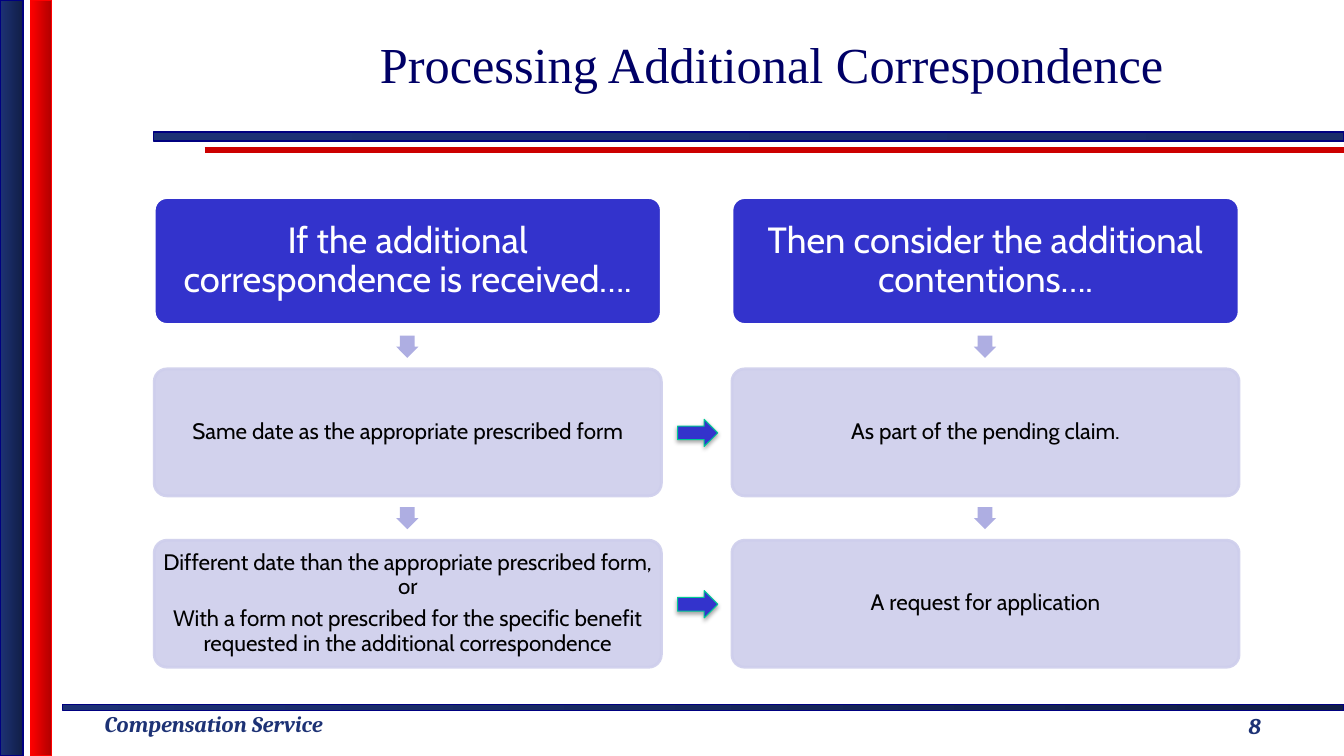
from lxml.etree import SubElement
from pptx import Presentation
from pptx.dml.color import RGBColor
from pptx.enum.shapes import MSO_CONNECTOR, MSO_SHAPE
from pptx.enum.text import MSO_ANCHOR, PP_ALIGN
from pptx.oxml.ns import qn
from pptx.util import Pt

PX = 9144  # 100 px to the inch
HUES = {
    "navy": "1D3275", "dusk": "111E46", "ink": "1A2D69", "edge": "000080",
    "red": "FF0000", "wine": "B20000", "rule": "CC0000", "title": "000066",
    "blue": "3333CC", "pale": "CECEEC", "mauve": "AEAEE2", "teal": "00C896",
    "white": "FFFFFF", "black": "000000",
}
COLS = [
    ["If the additional correspondence is received….",
     "Same date as the appropriate prescribed form",
     "Different date than the appropriate prescribed form, or\n"
     "With a form not prescribed for the specific benefit "
     "requested in the additional correspondence"],
    ["Then consider the additional contentions….",
     "As part of the pending claim.",
     "A request for application"],
]
LEFTS = [153, 726]
TOPS = [196, 366, 536]
WIDE, HIGH = 503, 126


def hue(name):
    return RGBColor.from_string(HUES[name])


def add(kind, box, fill, line=None, width=1):
    """Add a flat preset shape; a pair of fill names makes a gradient."""
    shape = slide.shapes.add_shape(kind, *[n * PX for n in box])
    shape.shadow.inherit = False
    if isinstance(fill, tuple):
        shape.fill.gradient()
        shape.fill.gradient_angle = 0
        for stop, name in zip(shape.fill.gradient_stops, fill):
            stop.color.rgb = hue(name)
    else:
        shape.fill.solid()
        shape.fill.fore_color.rgb = hue(fill)
    if line:
        shape.line.color.rgb = hue(line)
        shape.line.width = Pt(width)
    else:
        shape.line.fill.background()
    return shape


deck = Presentation()
deck.slide_width, deck.slide_height = 1333 * PX, 750 * PX
slide = deck.slides.add_slide(deck.slide_layouts[5])

# Frame of rules and bars
rule = slide.shapes.add_connector(
    MSO_CONNECTOR.STRAIGHT, 203 * PX, 149 * PX, 1333 * PX, 149 * PX)
rule.line.color.rgb = hue("rule")
rule.line.width = Pt(4)
SubElement(rule._element.spPr, qn("a:effectLst"))

for box, fill, line in [
    ((62, 699, 1271, 6), ("navy", "dusk"), "edge"),
    ((152, 131, 1181, 9), ("navy", "ink"), "edge"),
    ((0, 0, 23, 750), ("navy", "dusk"), "edge"),
    ((30, 0, 21, 750), ("red", "wine"), "red"),
]:
    add(MSO_SHAPE.RECTANGLE, box, fill, line)

# Title and footer
title = slide.shapes.title
title.left, title.top, title.width, title.height = [
    n * PX for n in (234, 0, 1063, 126)]
title.text_frame.text = "Processing Additional Correspondence"
title.text_frame.vertical_anchor = MSO_ANCHOR.MIDDLE
head = title.text_frame.paragraphs[0]
head.alignment = PP_ALIGN.CENTER
head.font.name, head.font.size = "Times New Roman", Pt(36)
head.font.color.rgb = hue("title")

for text, box, align, anchor in [
    ("Compensation Service", (94, 700, 282, 37), PP_ALIGN.LEFT, MSO_ANCHOR.TOP),
    ("8", (1156, 695, 177, 50), PP_ALIGN.CENTER, MSO_ANCHOR.MIDDLE),
]:
    frame = slide.shapes.add_textbox(*[n * PX for n in box]).text_frame
    frame.word_wrap = True
    frame.vertical_anchor = anchor
    frame.text = text
    para = frame.paragraphs[0]
    para.alignment = align
    para.font.name, para.font.size = "Cambria", Pt(16)
    para.font.bold = para.font.italic = True
    para.font.color.rgb = hue("navy")

# Two columns of cards, with a small arrow above each lower card
for left, texts in zip(LEFTS, COLS):
    for row, (top, text) in enumerate(zip(TOPS, texts)):
        if row == 0:
            fill, line, ink, size, inset = "blue", "white", "white", 26, 4
        else:
            fill, line, ink, size, inset = "pale", "pale", "black", 16, 2
            down = add(MSO_SHAPE.DOWN_ARROW,
                       (left + (WIDE - 22) // 2, top - 33, 22, 22), "mauve")
            down.adjustments[0] = 0.67
        card = add(MSO_SHAPE.ROUNDED_RECTANGLE,
                   (left, top, WIDE, HIGH), fill, line, 2)
        card.adjustments[0] = 0.1
        if row:
            for tint in card._element.spPr.iter(qn("a:srgbClr")):
                SubElement(tint, qn("a:alpha"), val="90000")
        frame = card.text_frame
        frame.word_wrap = True
        frame.vertical_anchor = MSO_ANCHOR.MIDDLE
        frame.margin_left = frame.margin_right = inset * PX
        frame.margin_top = frame.margin_bottom = inset * PX
        frame.text = text
        for para in frame.paragraphs:
            para.alignment = PP_ALIGN.CENTER
            para.line_spacing = 0.9
            para.space_after = Pt(size * 0.35)
            para.font.name, para.font.size = "Cabin", Pt(size)
            para.font.color.rgb = hue(ink)

# Arrows from left cards to right cards
for top in TOPS[1:]:
    arrow = add(MSO_SHAPE.RIGHT_ARROW, (672, top + 50, 40, 27),
                "blue", "teal", 0.75)
    glow = arrow._element.spPr.find(qn("a:effectLst"))
    shade = SubElement(glow, qn("a:outerShdw"), blurRad=str(Pt(3.1)),
                       dist=str(Pt(1.8)), dir="5400000", rotWithShape="0")
    tint = SubElement(shade, qn("a:srgbClr"), val=HUES["black"])
    SubElement(tint, qn("a:alpha"), val="35000")

deck.save("out.pptx")
